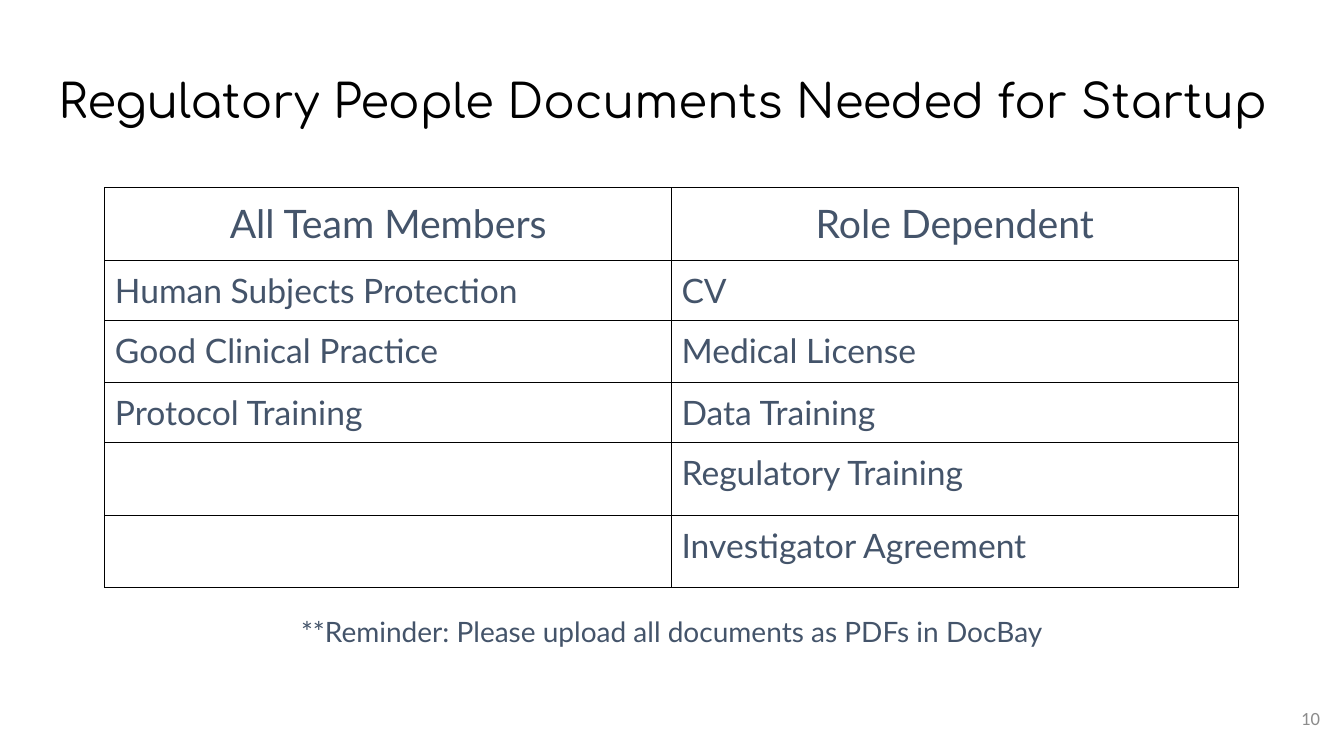
from lxml import etree
from pptx import Presentation
from pptx.dml.color import RGBColor
from pptx.enum import text
from pptx.oxml import ns
from pptx.util import Inches, Pt

TITLE = "Regulatory People Documents Needed for Startup"
ROWS = [
    ("All Team Members", "Role Dependent"),
    ("Human Subjects Protection", "CV"),
    ("Good Clinical Practice", "Medical License"),
    ("Protocol Training", "Data Training"),
    ("", "Regulatory Training"),
    ("", "Investigator Agreement"),
]
ROW_HEIGHTS = [0.72, 0.6, 0.61, 0.6, 0.72, 0.72]
COLUMN_WIDTH = 5.62
REMINDER = "**Reminder: Please upload all documents as PDFs in DocBay"
PAGE_NUMBER = "10"

BLACK = RGBColor(0x00, 0x00, 0x00)
SLATE = RGBColor(0x44, 0x54, 0x6A)
GRAY = RGBColor(0x8C, 0x8C, 0x8C)
ALIGN = text.PP_ALIGN
ANCHOR = text.MSO_ANCHOR


def set_margins(holder, across, down):
    holder.margin_left = holder.margin_right = Inches(across)
    holder.margin_top = holder.margin_bottom = Inches(down)


def write(frame, words, font, size, color, align):
    frame.text = words
    para = frame.paragraphs[0]
    para.alignment = align
    para.font.name = font
    para.font.size = Pt(size)
    para.font.color.rgb = color
    return para


def add_borders(cell):
    properties = cell._tc.get_or_add_tcPr()
    for side in ("lnL", "lnR", "lnT", "lnB"):
        line = etree.SubElement(properties, ns.qn("a:" + side), w=str(Pt(0.75)))
        fill = etree.SubElement(line, ns.qn("a:solidFill"))
        etree.SubElement(fill, ns.qn("a:srgbClr"), val=str(BLACK))


def add_title(page):
    box = page.shapes.title
    box.left, box.top = Inches(0.45), Inches(0.65)
    box.width, box.height = Inches(12.42), Inches(0.91)
    frame = box.text_frame
    set_margins(frame, 0.13, 0.13)
    frame.vertical_anchor = ANCHOR.TOP
    frame.auto_size = text.MSO_AUTO_SIZE.NONE
    para = write(frame, TITLE, "Comfortaa", 33.3, BLACK, ALIGN.LEFT)
    para.line_spacing = 0.9


def add_documents(page):
    table = page.shapes.add_table(
        len(ROWS), 2, Inches(1.04), Inches(1.86),
        Inches(2 * COLUMN_WIDTH), Inches(sum(ROW_HEIGHTS))).table
    table.first_row = table.horz_banding = False
    for column in table.columns:
        column.width = Inches(COLUMN_WIDTH)
    for i, (entries, height) in enumerate(zip(ROWS, ROW_HEIGHTS)):
        table.rows[i].height = Inches(height)
        size, align, anchor = (24, ALIGN.LEFT, ANCHOR.TOP) if i else (28, ALIGN.CENTER, ANCHOR.MIDDLE)
        for j, entry in enumerate(entries):
            cell = table.cell(i, j)
            set_margins(cell, 0.1, 0.1)
            cell.vertical_anchor = anchor
            add_borders(cell)
            cell.fill.background()
            write(cell.text_frame, entry, "Lato", size, SLATE, align)


def add_text(page, left, top, width, height):
    frame = page.shapes.add_textbox(
        Inches(left), Inches(top), Inches(width), Inches(height)).text_frame
    frame.word_wrap = True
    return frame


def main():
    deck = Presentation()
    deck.slide_width, deck.slide_height = Inches(13.33), Inches(7.5)
    page = deck.slides.add_slide(deck.slide_layouts[5])
    add_title(page)

    number = add_text(page, 12.39, 6.84, 0.8, 0.57)
    set_margins(number, 0.1, 0.05)
    number.vertical_anchor = ANCHOR.MIDDLE
    write(number, PAGE_NUMBER, "Calibri", 13.3, GRAY, ALIGN.RIGHT)

    add_documents(page)

    reminder = add_text(page, 2.3, 5.95, 8.73, 1)
    set_margins(reminder, 0.1, 0.1)
    reminder.auto_size = text.MSO_AUTO_SIZE.SHAPE_TO_FIT_TEXT
    para = write(reminder, REMINDER, "Lato", 20, SLATE, ALIGN.CENTER)
    para.line_spacing = 1.15
    para.space_before = Pt(12)

    deck.save("out.pptx")


if __name__ == "__main__":
    main()
